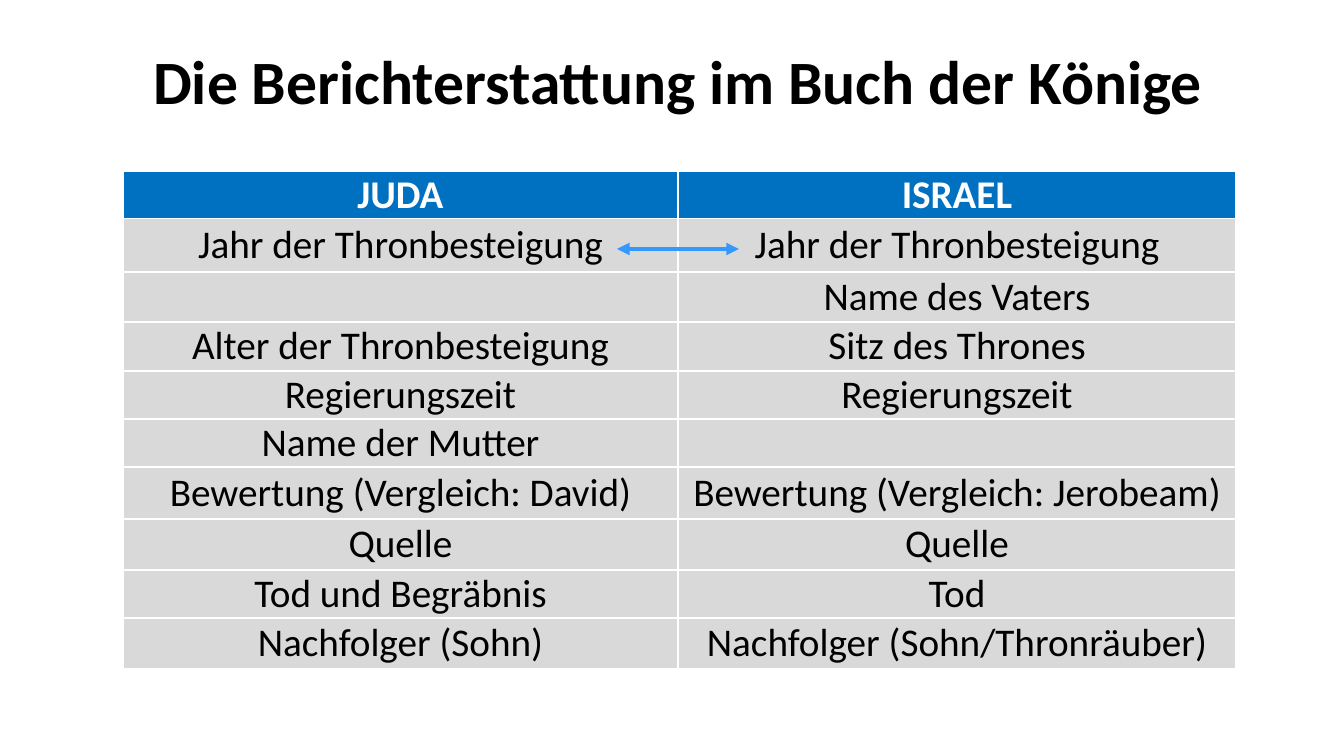
"""Build a slide comparing the royal reports on Juda and Israel."""
from lxml import etree
from pptx import Presentation
from pptx.dml.color import RGBColor
from pptx.enum.shapes import MSO_CONNECTOR
from pptx.enum.text import MSO_ANCHOR, PP_ALIGN
from pptx.oxml.ns import qn
from pptx.util import Pt

TITLE = "Die Berichterstattung im Buch der Könige"
ROWS = [
    ("JUDA", "ISRAEL", 47),
    ("Jahr der Thronbesteigung", "Jahr der Thronbesteigung", 54),
    ("", "Name des Vaters", 50),
    ("Alter der Thronbesteigung", "Sitz des Thrones", 49),
    ("Regierungszeit", "Regierungszeit", 48),
    ("Name der Mutter", "", 48),
    ("Bewertung (Vergleich: David)", "Bewertung (Vergleich: Jerobeam)", 52),
    ("Quelle", "Quelle", 51),
    ("Tod und Begräbnis", "Tod", 48),
    ("Nachfolger (Sohn)", "Nachfolger (Sohn/Thronräuber)", 51),
]
WIDTHS = (555, 558)
TITLE_BOX = (32, 40, 1293, 90)
LEFT, TOP = 123, 171
ARROW = (617, 249, 739, 249)
PAD = 14

BLACK = RGBColor(0x00, 0x00, 0x00)
WHITE = RGBColor(0xFF, 0xFF, 0xFF)
BLUE = RGBColor(0x00, 0x70, 0xC0)
GRAY = RGBColor(0xD9, 0xD9, 0xD9)
SKY = RGBColor(0x33, 0x99, 0xFF)
CENTER, MIDDLE = PP_ALIGN.CENTER, MSO_ANCHOR.MIDDLE
STRAIGHT = MSO_CONNECTOR.STRAIGHT
FONT = "Calibri"


def px(*vals):
    return [round(v * 914400 / 100.8) for v in vals]


def write(para, text, size, color, bold):
    para.text = text
    para.alignment = CENTER
    font = para.font
    font.name, font.size, font.bold = FONT, Pt(size), bold
    font.color.rgb = color


def add_title(slide):
    frame = slide.shapes.add_textbox(*px(*TITLE_BOX)).text_frame
    frame.word_wrap = True
    frame.vertical_anchor = MIDDLE
    para = frame.paragraphs[0]
    write(para, TITLE, 44, BLACK, True)
    para.line_spacing = 0.9


def add_grid(slide):
    size = sum(WIDTHS), sum(row[-1] for row in ROWS)
    table = slide.shapes.add_table(
        len(ROWS), len(WIDTHS), *px(LEFT, TOP, *size)).table
    table.horz_banding = False
    for col, width in zip(table.columns, px(*WIDTHS)):
        col.width = width
    for i, (*texts, height) in enumerate(ROWS):
        head = i == 0
        table.rows[i].height = px(height)[0]
        for j, text in enumerate(texts):
            cell = table.cell(i, j)
            cell.fill.solid()
            cell.fill.fore_color.rgb = BLUE if head else GRAY
            cell.margin_left, cell.margin_right = px(PAD, PAD)
            cell.margin_top = cell.margin_bottom = 0
            cell.vertical_anchor = MIDDLE
            write(cell.text_frame.paragraphs[0], text, 28,
                  WHITE if head else BLACK, head)


def add_arrow(slide):
    arrow = slide.shapes.add_connector(STRAIGHT, *px(*ARROW))
    arrow.line.color.rgb = SKY
    arrow.line.width = Pt(3)
    props = arrow.element.spPr
    line = props.find(qn("a:ln"))
    for tag in ("a:headEnd", "a:tailEnd"):
        etree.SubElement(line, qn(tag), type="triangle")
    etree.SubElement(props, qn("a:effectLst"))


def main():
    deck = Presentation()
    deck.slide_width, deck.slide_height = px(1344, 756)
    slide = deck.slides.add_slide(deck.slide_layouts[6])
    add_title(slide)
    add_grid(slide)
    add_arrow(slide)
    deck.save("out.pptx")


if __name__ == "__main__":
    main()
